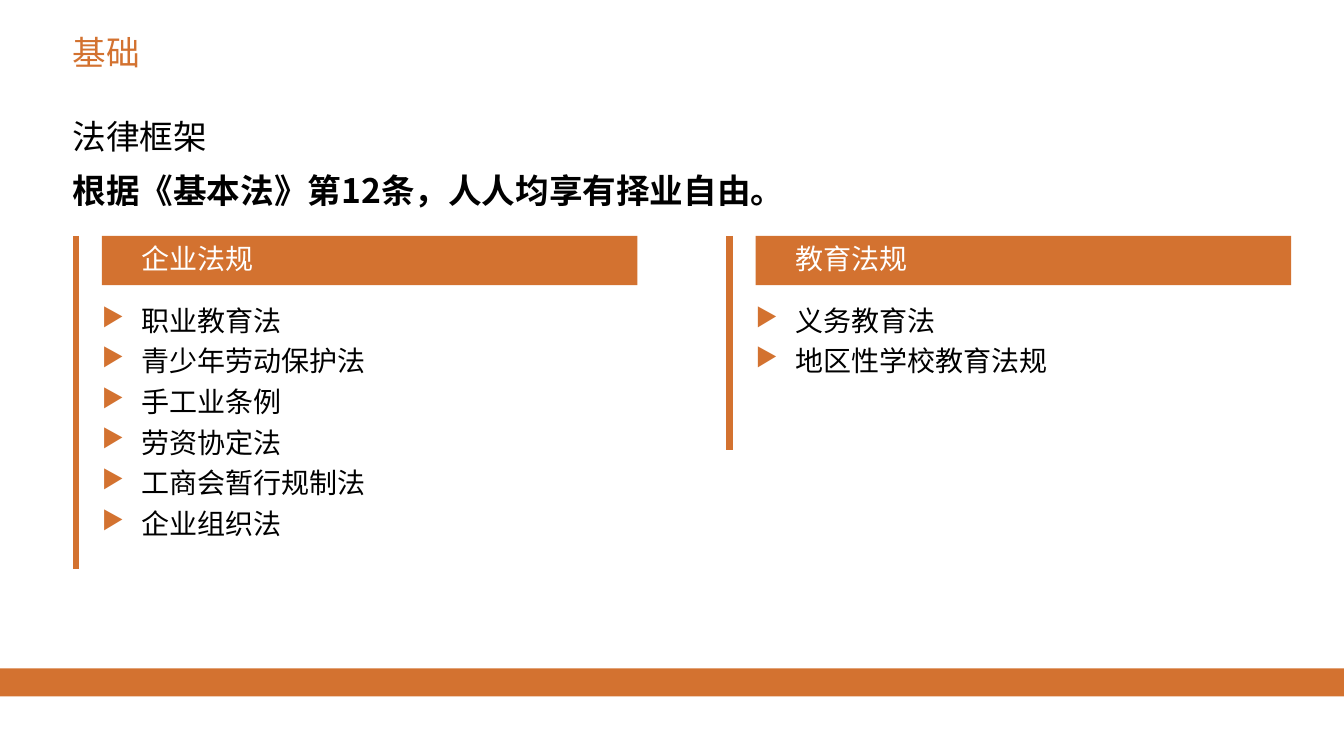
from dataclasses import dataclass

from lxml.etree import SubElement
from pptx import Presentation
from pptx.dml.color import RGBColor
from pptx.enum.shapes import MSO_CONNECTOR, MSO_SHAPE
from pptx.enum.text import MSO_ANCHOR as Anchor, PP_ALIGN as Align
from pptx.oxml.ns import qn
from pptx.util import Emu, Inches, Pt

ORANGE, BLACK, WHITE = "D37230", "000000", "FFFFFF"
LATIN, CHINESE = "Calibri", "Noto Sans CJK SC"
WIDTH, HEIGHT = Inches(13.33), Inches(7.5)
MARGIN, INDENT = 5.4, 2.93
RULE_LEFT, PANEL_LEFT, PANEL_WIDTH, PANEL_PITCH = 5.63, 7.58, 39.84, 48.65
PANEL_TOP, HEADING_HEIGHT, LIST_TOP, LIST_HEIGHT = 31.2, 6.53, 40.13, 38.13


@dataclass
class Panel:
    heading: str
    laws: list[str]
    rule_bottom: float


PANELS = [
    Panel("企业法规", ["职业教育法", "青少年劳动保护法", "手工业条例",
                   "劳资协定法", "工商会暂行规制法", "企业组织法"], 75.33),
    Panel("教育法规", ["义务教育法", "地区性学校教育法规"], 59.47),
]


def columns(count: float) -> Emu:
    return Emu(round(WIDTH * count / 100))


def rows(count: float) -> Emu:
    return Emu(round(HEIGHT * count / 100))


def box(left: float, top: float, width: float, height: float) -> tuple:
    return columns(left), rows(top), columns(width), rows(height)


def rgb(value: str) -> RGBColor:
    return RGBColor.from_string(value)


def set_frame(frame, anchor=Anchor.TOP, left_inset: float = 0) -> None:
    frame.word_wrap = True
    frame.vertical_anchor = anchor
    frame.margin_left = columns(left_inset)
    frame.margin_top = frame.margin_right = frame.margin_bottom = 0


def style(paragraph, size: float, color: str, bold: bool = False, name: str = LATIN) -> None:
    paragraph.alignment = Align.LEFT
    font = paragraph.font
    font.size, font.bold, font.name = Pt(size), bold, name
    font.color.rgb = rgb(color)
    properties = paragraph._p.pPr.find(qn("a:defRPr"))
    SubElement(properties, qn("a:ea"), typeface=CHINESE)


def add_bullet(paragraph) -> None:
    properties = paragraph._p.get_or_add_pPr()
    properties.set("marL", str(columns(INDENT)))
    properties.set("indent", str(-columns(INDENT)))
    color = SubElement(properties, qn("a:buClr"))
    SubElement(color, qn("a:srgbClr"), val=ORANGE)
    SubElement(properties, qn("a:buSzPct"), val="90000")
    SubElement(properties, qn("a:buChar"), char="▶")


def add_paragraphs(frame, texts: list[str], gap: float):
    for index, text in enumerate(texts):
        paragraph = frame.add_paragraph() if index else frame.paragraphs[0]
        paragraph.text = text
        if index:
            paragraph.space_before = Pt(gap)
        yield paragraph


def add_bar(slide, left: float, top: float, width: float, height: float):
    bar = slide.shapes.add_shape(MSO_SHAPE.RECTANGLE, *box(left, top, width, height))
    bar.shadow.inherit = False
    bar.fill.solid()
    bar.fill.fore_color.rgb = rgb(ORANGE)
    bar.line.fill.background()
    return bar


def add_title(slide, text: str) -> None:
    title = slide.shapes.title
    title.left, title.top, title.width, title.height = box(MARGIN, 4.27, 73.82, 6.53)
    set_frame(title.text_frame)
    title.text_frame.text = text
    style(title.text_frame.paragraphs[0], 24, ORANGE)


def add_introduction(slide, topic: str, statement: str) -> None:
    frame = slide.shapes.add_textbox(*box(MARGIN, 15.33, 90.7, 14.67)).text_frame
    set_frame(frame)
    first, second = add_paragraphs(frame, [topic, statement], 10)
    style(first, 24, BLACK)
    style(second, 24, BLACK, True, CHINESE)


def add_panel(slide, panel: Panel, offset: float) -> None:
    left = PANEL_LEFT + offset
    heading = add_bar(slide, left, PANEL_TOP, PANEL_WIDTH, HEADING_HEIGHT).text_frame
    set_frame(heading, Anchor.MIDDLE, INDENT)
    heading.text = panel.heading
    heading.paragraphs[0].line_spacing = 0.9
    style(heading.paragraphs[0], 20, WHITE)

    laws = slide.shapes.add_textbox(*box(left, LIST_TOP, PANEL_WIDTH, LIST_HEIGHT)).text_frame
    set_frame(laws)
    for paragraph in add_paragraphs(laws, panel.laws, 5):
        add_bullet(paragraph)
        style(paragraph, 20, BLACK)

    x = columns(RULE_LEFT + offset)
    rule = slide.shapes.add_connector(
        MSO_CONNECTOR.STRAIGHT, x, rows(PANEL_TOP), x, rows(panel.rule_bottom))
    rule.line.color.rgb = rgb(ORANGE)
    rule.line.width = Pt(4.5)
    SubElement(rule._element.spPr, qn("a:effectLst"))


def main() -> None:
    presentation = Presentation()
    presentation.slide_width, presentation.slide_height = WIDTH, HEIGHT
    slide = presentation.slides.add_slide(presentation.slide_layouts[5])
    add_bar(slide, 0, 88.4, 100, 3.73)
    add_title(slide, "基础")
    add_introduction(slide, "法律框架", "根据《基本法》第12条，人人均享有择业自由。")
    for index, panel in enumerate(PANELS):
        add_panel(slide, panel, index * PANEL_PITCH)
    presentation.save("out.pptx")


if __name__ == "__main__":
    main()
